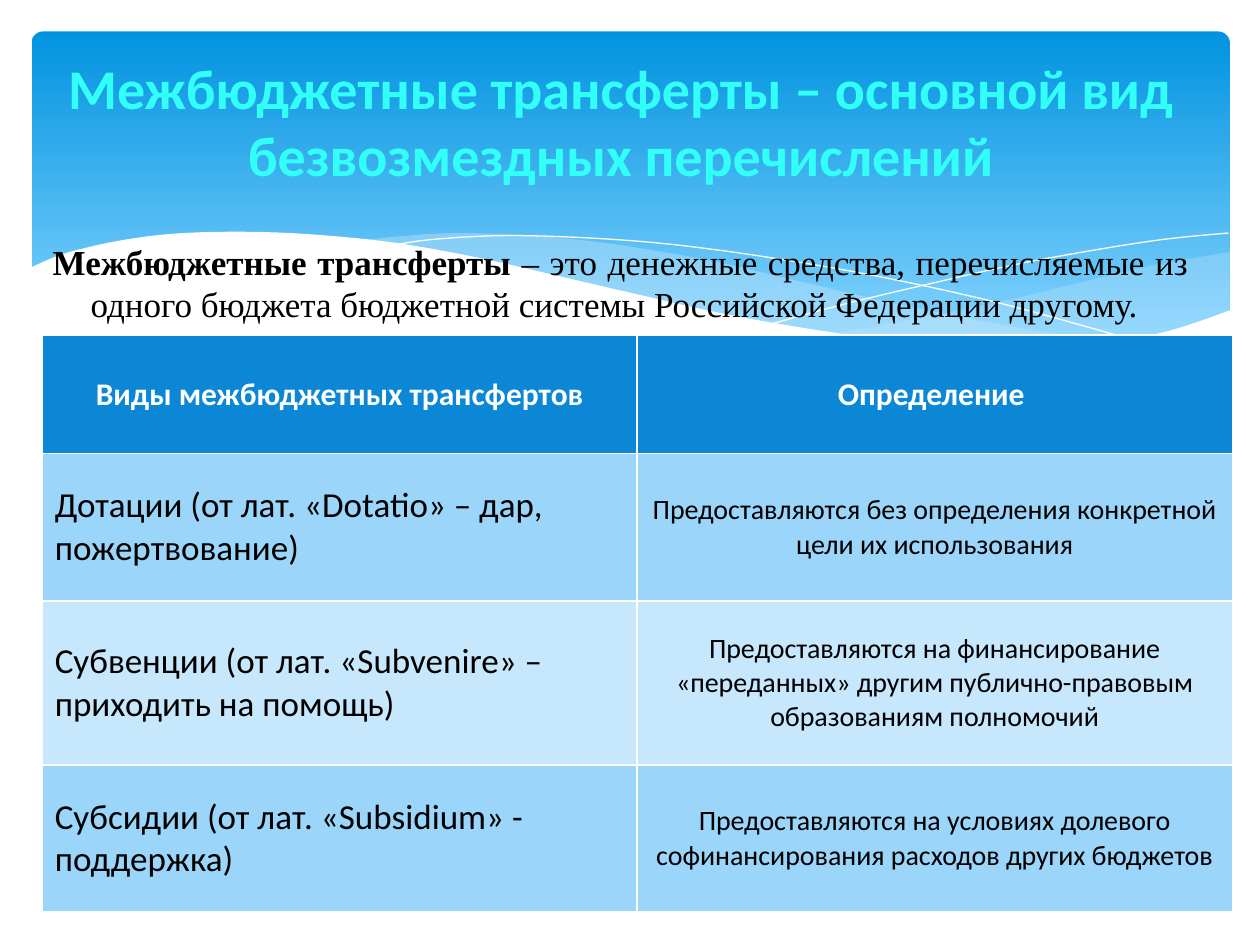
import pptx
import pptx.dml.color
import pptx.enum.shapes
import pptx.enum.text
import pptx.oxml.ns
import pptx.oxml.xmlchemy
import pptx.util

ALIGN = pptx.enum.text.PP_ALIGN
MIDDLE = pptx.enum.text.MSO_ANCHOR.MIDDLE
WIDTH, HEIGHT = pptx.util.Inches(10), pptx.util.Inches(7.5)

# Wave knots on a grid of 1000 columns by 145 rows
WAVE_COLUMNS, WAVE_ROWS = 1000, 145
RIGHT_WAVE = [
    [(976, 16), (935, 23), (891, 32), (805, 53), (753, 64), (706, 73), (661, 81)],
    [(661, 81), (705, 87), (757, 91), (803, 94), (844, 93), (881, 89), (913, 83),
     (942, 75), (976, 63)],
]
MIDDLE_WAVE = [
    [(893, 89), (837, 81), (775, 70), (706, 56), (629, 38), (569, 24), (514, 14),
     (465, 7), (420, 3), (361, 1), (313, 4), (286, 7)],
    [(286, 7), (342, 15), (404, 27), (449, 38), (530, 56), (601, 71), (665, 82),
     (722, 90), (773, 93), (818, 94), (867, 92), (893, 89)],
]
FALLING_LINE = [[(309, 11), (344, 6), (401, 3), (469, 5), (533, 10), (608, 20),
                 (695, 35), (795, 57), (907, 88)]]
RISING_LINE = [[(613, 73), (672, 57), (748, 39), (806, 26), (866, 15), (924, 6),
                (975, 1)]]
WHITE_WAVE = [
    [(977, 62), (930, 78), (875, 89), (809, 93), (744, 90), (668, 81), (579, 66),
     (503, 49), (447, 36), (391, 23), (340, 13), (292, 6), (230, 1), (177, 0),
     (132, 2), (95, 7), (67, 13), (46, 19), (23, 29)],
    [(23, 145), (977, 145)],
]

HEADINGS = ("Виды межбюджетных трансфертов", "Определение ")
TRANSFERS = [
    ("Дотации (от лат. «Dotatio» – дар, пожертвование)",
     "Предоставляются без определения конкретной цели их использования"),
    ("Субвенции (от лат. «Subvenire» – приходить на помощь)",
     "Предоставляются на финансирование «переданных» другим "
     "публично-правовым образованиям полномочий"),
    ("Субсидии (от лат. «Subsidium» - поддержка)",
     "Предоставляются на условиях долевого софинансирования расходов других бюджетов"),
]
ROW_SHARES = (0.94, 1.17, 1.3, 1.17)
BAND_FILLS = ("9BD5FA", "C6E7FC")


def color(value):
    return pptx.dml.color.RGBColor.from_string(value)


def share_box(left, top, width, height):
    """Turn percentages of the slide into lengths."""
    return (int(WIDTH * left / 100), int(HEIGHT * top / 100),
            int(WIDTH * width / 100), int(HEIGHT * height / 100))


def write(paragraph, text, tint, **formats):
    run = paragraph.add_run()
    run.text = text
    run.font.color.rgb = color(tint)
    for name, value in formats.items():
        setattr(run.font, name, value)


def smooth(knots, steps=5):
    """Pass a Catmull-Rom curve through the knots."""
    if len(knots) < 3:
        return knots
    padded = [knots[0], *knots, knots[-1]]
    points = []
    for a, b, c, d in zip(padded, padded[1:], padded[2:], padded[3:]):
        for step in range(steps):
            t = step / steps
            points.append(tuple(
                (2 * q + (r - p) * t + (2 * p - 5 * q + 4 * r - s) * t ** 2
                 + (3 * q - p - 3 * r + s) * t ** 3) / 2
                for p, q, r, s in zip(a, b, c, d)))
    return points + [knots[-1]]


def add_wave(slide, box, edges, fill=None, opacity=100):
    """Draw a filled wave, or an open white hairline when no fill is given."""
    left, top, width, height = box
    points = [(round(left + x * width / WAVE_COLUMNS), round(top + y * height / WAVE_ROWS))
              for edge in edges for x, y in smooth(edge)]
    builder = slide.shapes.build_freeform(*points[0], scale=1.0)
    builder.add_line_segments(points[1:], close=fill is not None)
    shape = builder.convert_to_shape()
    shape.shadow.inherit = False
    if fill is None:
        shape.fill.background()
        shape.line.color.rgb = color("FFFFFF")
        shape.line.width = pptx.util.Pt(0)
        return
    shape.line.fill.background()
    shape.fill.solid()
    shape.fill.fore_color.rgb = color(fill)
    if opacity < 100:
        tint = shape._element.spPr.find(".//" + pptx.oxml.ns.qn("a:srgbClr"))
        alpha = pptx.oxml.xmlchemy.OxmlElement("a:alpha")
        alpha.set("val", str(opacity * 1000))
        tint.append(alpha)


def add_banner(slide, box):
    banner = slide.shapes.add_shape(
        pptx.enum.shapes.MSO_SHAPE.ROUNDED_RECTANGLE, *box)
    banner.adjustments[0] = 0.034
    banner.shadow.inherit = False
    banner.line.fill.background()
    banner.fill.gradient()
    banner.fill.gradient_angle = 270
    stops = ((0, "0293E0"), (0.9, "83D3FE"))
    for stop, (position, tint) in zip(banner.fill.gradient_stops, stops):
        stop.position = position
        stop.color.rgb = color(tint)


def add_waves(slide, box):
    add_wave(slide, box, RIGHT_WAVE, "C6E7FC", 29)
    add_wave(slide, box, MIDDLE_WAVE, "C6E7FC", 40)
    add_wave(slide, box, FALLING_LINE)
    add_wave(slide, box, RISING_LINE)
    add_wave(slide, box, WHITE_WAVE, "FFFFFF")


def add_text_box(slide, box, alignment):
    """Add a wrapping text box and return its frame and first paragraph."""
    frame = slide.shapes.add_textbox(*box).text_frame
    frame.word_wrap = True
    paragraph = frame.paragraphs[0]
    paragraph.alignment = alignment
    return frame, paragraph


def add_title(slide, box):
    frame, paragraph = add_text_box(slide, box, ALIGN.CENTER)
    frame.vertical_anchor = MIDDLE
    write(paragraph, "Межбюджетные трансферты – основной вид безвозмездных перечислений",
          "32FFF8", name="Calibri", size=pptx.util.Pt(32), bold=True)


def add_definition(slide, box):
    _, paragraph = add_text_box(slide, box, ALIGN.JUSTIFY)
    indent = pptx.util.Inches(0.3)
    properties = paragraph._p.get_or_add_pPr()
    properties.set("marL", str(indent))
    properties.set("indent", str(-indent))
    formats = {"name": "Times New Roman", "size": pptx.util.Pt(20)}
    write(paragraph, "Межбюджетные трансферты ", "000000", bold=True, **formats)
    write(paragraph, "– это денежные средства, перечисляемые из одного бюджета бюджетной "
          "системы Российской Федерации другому.", "000000", bold=False, **formats)


def add_transfer_table(slide, box):
    rows = [HEADINGS, *TRANSFERS]
    table = slide.shapes.add_table(len(rows), len(HEADINGS), *box).table
    for row_index, texts in enumerate(rows):
        header = row_index == 0
        table.rows[row_index].height = int(box[3] * ROW_SHARES[row_index] / sum(ROW_SHARES))
        for column_index, text in enumerate(texts):
            cell = table.cell(row_index, column_index)
            cell.vertical_anchor = MIDDLE
            cell.fill.solid()
            cell.fill.fore_color.rgb = color(
                "0B87D6" if header else BAND_FILLS[(row_index - 1) % 2])
            paragraph = cell.text_frame.paragraphs[0]
            centred = header or column_index == 1
            paragraph.alignment = ALIGN.CENTER if centred else ALIGN.LEFT
            size = 18 if header else (20, 16)[column_index]
            write(paragraph, text, "FFFFFF" if header else "000000",
                  name="Calibri", size=pptx.util.Pt(size), bold=header)


def main():
    presentation = pptx.Presentation()
    presentation.slide_width, presentation.slide_height = WIDTH, HEIGHT
    slide = presentation.slides.add_slide(presentation.slide_layouts[6])
    add_banner(slide, share_box(2.5, 3.33, 95.1, 36))
    add_waves(slide, share_box(0, 24.53, 100, 19.33))
    add_title(slide, share_box(4.3, 3.87, 90, 17.87))
    add_definition(slide, share_box(3.2, 24.8, 92.1, 10.27))
    add_transfer_table(slide, share_box(3.35, 35.47, 94.45, 61.07))
    presentation.save("out.pptx")


if __name__ == "__main__":
    main()
